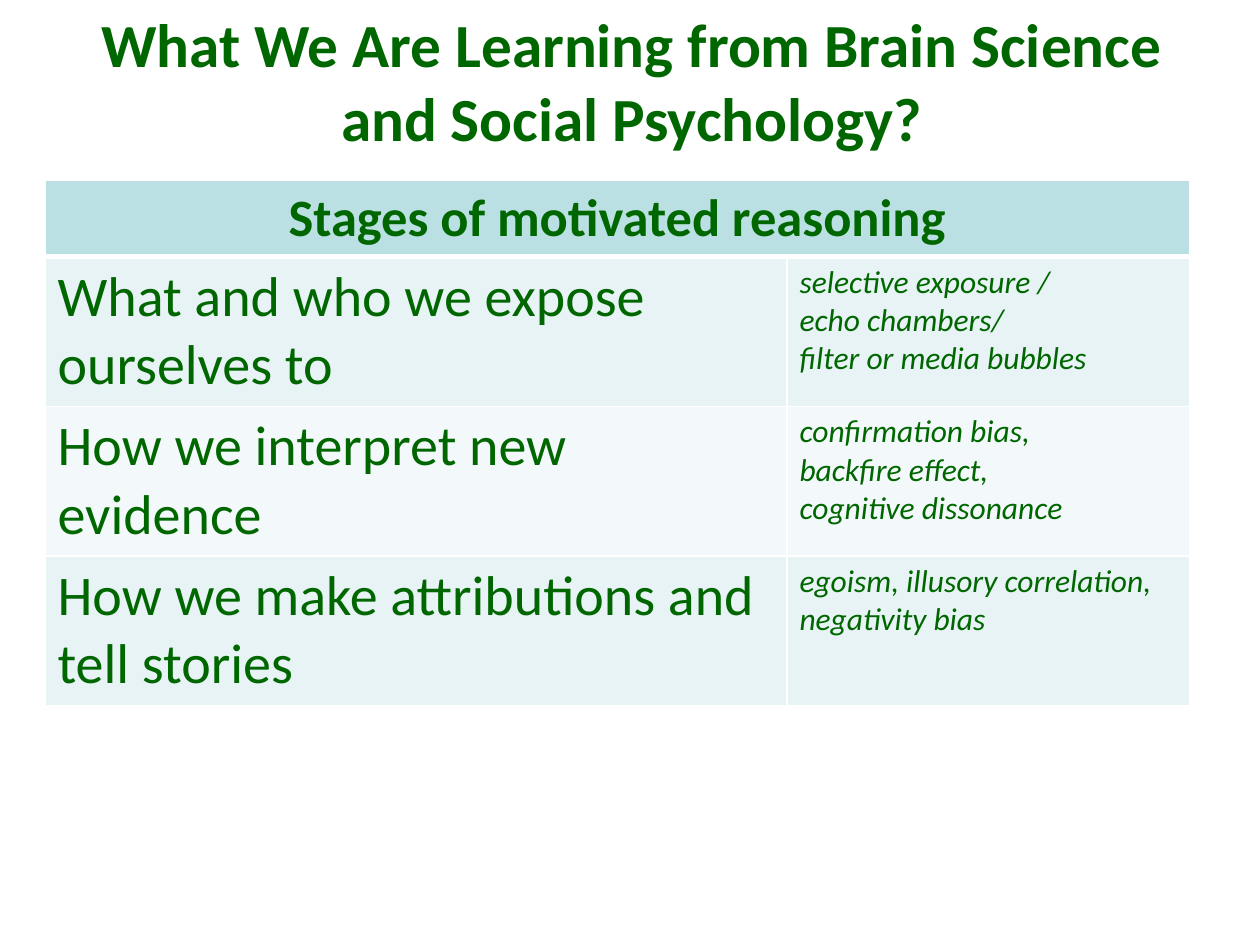
from lxml import etree
from pptx import Presentation
from pptx import util as u
from pptx.dml.color import RGBColor
from pptx.enum import text
from pptx.oxml import ns

SCALE = 914400 / 126  # EMU per px
FONT = "Calibri"
GREEN, WHITE = "006600", "FFFFFF"
HEADER_FILL, BAND_FILLS = "BBE0E3", ("E7F3F4", "F3F9FA")

STAGES = [
    ("What and who we expose ourselves to",
     ["selective exposure /", "echo chambers/", "filter or media bubbles"]),
    ("How we interpret new evidence",
     ["confirmation bias,", "backfire effect,", "cognitive dissonance"]),
    ("How we make attributions and tell stories",
     ["egoism, illusory correlation, negativity bias"]),
]


def px(length):
    return u.Emu(round(length * SCALE))


def color(hex_code):
    return RGBColor.from_string(hex_code)


def write(frame, lines, size, bold=False, italic=False, align=text.PP_ALIGN.LEFT):
    for index, line in enumerate(lines):
        paragraph = frame.add_paragraph() if index else frame.paragraphs[0]
        paragraph.alignment = align
        run = paragraph.add_run()
        run.text = line
        font = run.font
        font.name, font.size = FONT, u.Pt(size)
        font.bold, font.italic = bold, italic
        font.color.rgb = color(GREEN)


def paint(cell, fill, bottom=1, top=1):
    cell.fill.solid()
    cell.fill.fore_color.rgb = color(fill)
    properties = cell._tc.get_or_add_tcPr()
    # Borders come before the fill, in this order
    widths = {"lnL": 1, "lnR": 1, "lnT": top, "lnB": bottom}
    for index, (side, width) in enumerate(widths.items()):
        border = etree.Element(ns.qn(f"a:{side}"), w=str(u.Pt(width)))
        solid = etree.SubElement(border, ns.qn("a:solidFill"))
        etree.SubElement(solid, ns.qn("a:srgbClr"), val=WHITE)
        properties.insert(index, border)


def place_title(slide, left, top, width, height):
    title = slide.shapes.title
    title.left, title.top = px(left), px(top)
    title.width, title.height = px(width), px(height)
    frame = title.text_frame
    frame.word_wrap = True
    frame.vertical_anchor = text.MSO_ANCHOR.MIDDLE
    write(frame, ["What We Are Learning from Brain Science and Social Psychology?"],
          35, bold=True, align=text.PP_ALIGN.CENTER)


def place_stages(slide, left, top, width, header_height, row_height):
    rows = len(STAGES) + 1
    height = header_height + row_height * len(STAGES)
    table = slide.shapes.add_table(
        rows, 2, px(left), px(top), px(width), px(height)).table
    stage_width = 742
    table.columns[0].width = px(stage_width)
    table.columns[1].width = px(width - stage_width)

    # Header across both columns
    table.rows[0].height = px(header_height)
    header = table.cell(0, 0)
    header.merge(table.cell(0, 1))
    write(header.text_frame, ["Stages of motivated reasoning"], 30,
          bold=True, align=text.PP_ALIGN.CENTER)
    for column in range(2):
        paint(table.cell(0, column), HEADER_FILL, bottom=3)

    # One banded row per stage
    for row, (stage, biases) in enumerate(STAGES, 1):
        table.rows[row].height = px(row_height)
        write(table.cell(row, 0).text_frame, [stage], 32)
        write(table.cell(row, 1).text_frame, biases, 18, italic=True)
        for column in range(2):
            paint(table.cell(row, column), BAND_FILLS[(row - 1) % 2],
                  top=3 if row == 1 else 1)


def main():
    deck = Presentation()
    deck.slide_width, deck.slide_height = px(1260), px(945)
    slide = deck.slides.add_slide(deck.slide_layouts[5])
    place_title(slide, 65, 1, 1134, 158)
    place_stages(slide, 45, 180, 1145, 73, 118)
    deck.save("out.pptx")


if __name__ == "__main__":
    main()
